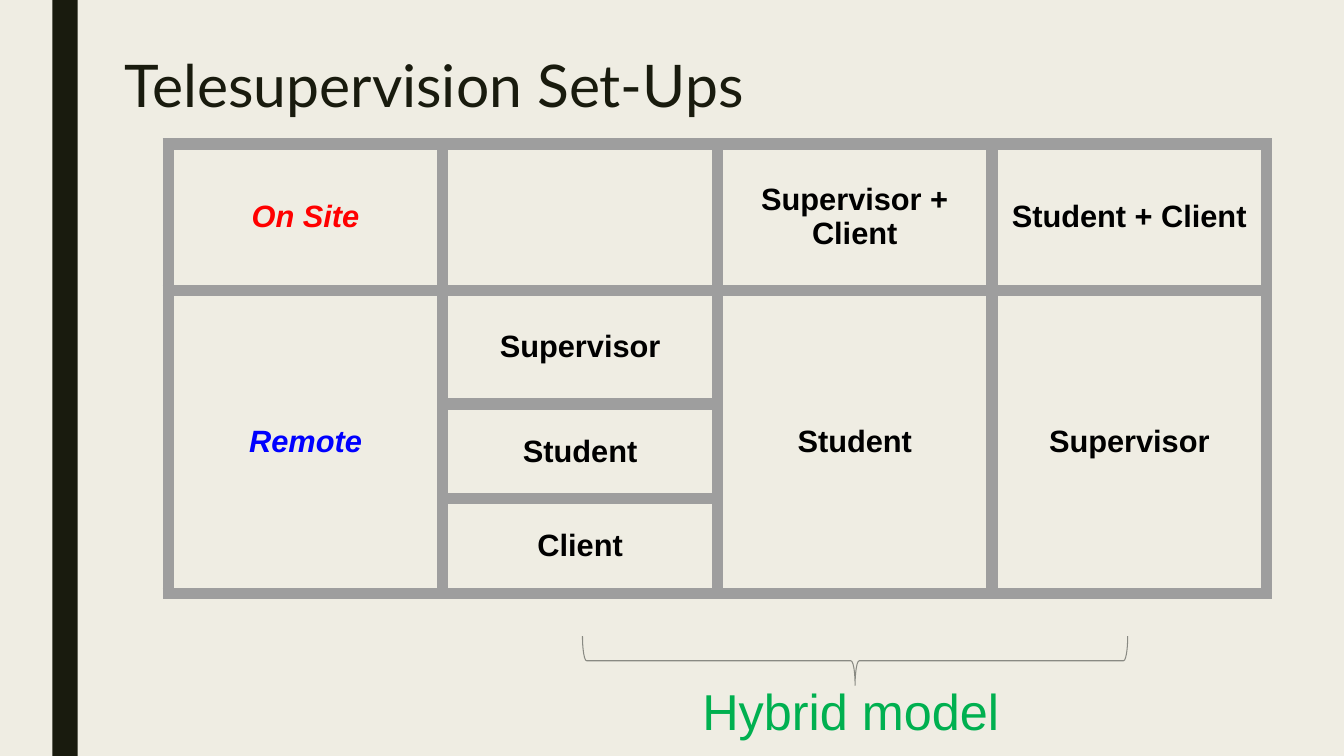
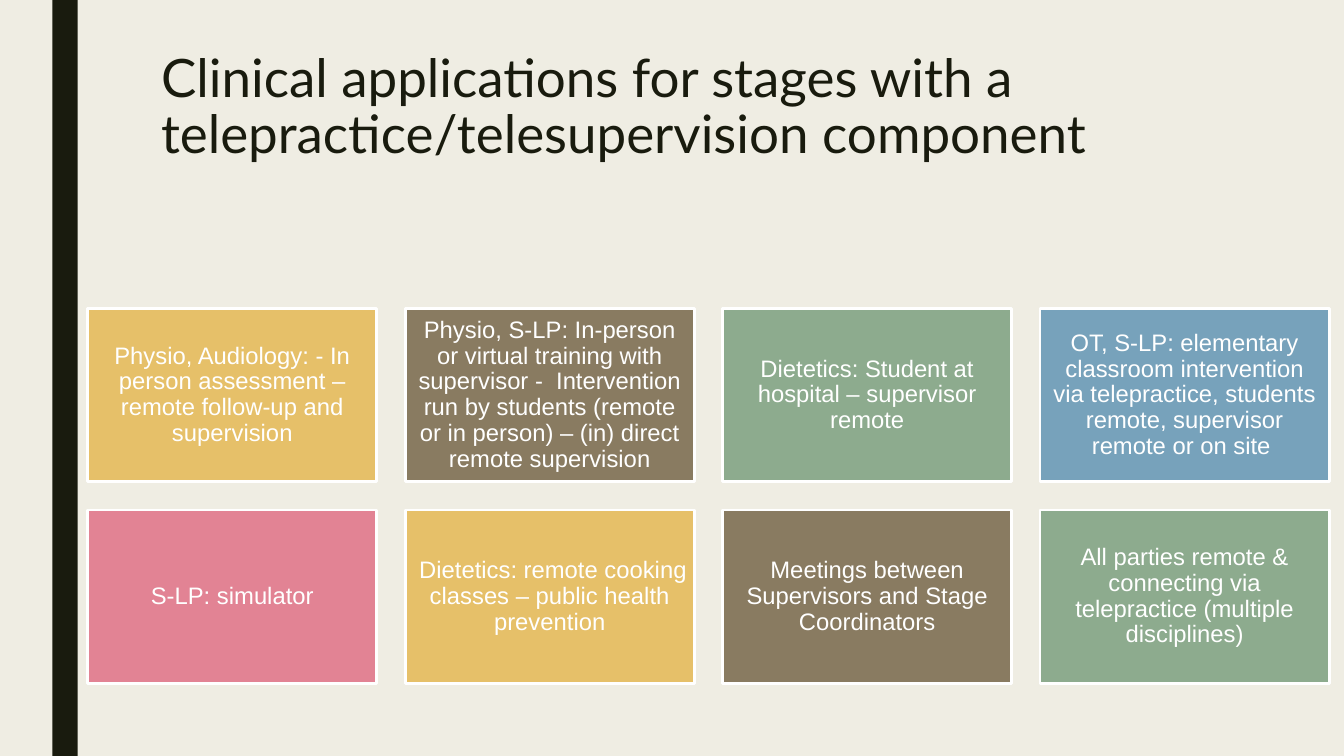
from dataclasses import dataclass

from lxml import etree
from pptx import Presentation
from pptx.dml.color import RGBColor
from pptx.enum.shapes import MSO_SHAPE
from pptx.enum.text import MSO_ANCHOR, PP_ALIGN
from pptx.oxml.ns import qn
from pptx.util import Cm, Pt

RECTANGLE = MSO_SHAPE.RECTANGLE
LEFT_BRACE = MSO_SHAPE.LEFT_BRACE
MIDDLE = MSO_ANCHOR.MIDDLE
LEFT, CENTER = PP_ALIGN.LEFT, PP_ALIGN.CENTER


@dataclass(frozen=True)
class Theme:
    # Colours
    paper: str = "EFEDE3"
    ink: str = "191B0E"
    black: str = "000000"
    white: str = "FFFFFF"
    grid: str = "9E9E9E"
    brace: str = "898A83"
    on_site: str = "FF0000"
    remote: str = "0000FF"
    hybrid: str = "00B050"
    cards: tuple = ("E6C069", "897B61", "8DAB8E", "77A2BB", "E28394")
    # Fonts and sizes in points
    title_font: str = "Lato"
    body_font: str = "Arial"
    title_size: float = 42
    long_title_size: float = 37.8
    table_size: float = 22
    label_size: float = 36
    card_size: float = 17
    grid_width: float = 9


THEME = Theme()

# Row, column, text, rows spanned
SETUPS = [
    (0, 0, "On Site", 1),
    (0, 2, "Supervisor + Client", 1),
    (0, 3, "Student + Client", 1),
    (1, 0, "Remote", 3),
    (1, 1, "Supervisor", 1),
    (2, 1, "Student", 1),
    (3, 1, "Client", 1),
    (1, 2, "Student", 3),
    (1, 3, "Supervisor", 3),
]
SETTING_COLOURS = {"On Site": THEME.on_site, "Remote": THEME.remote}

APPLICATIONS = [
    "Physio, Audiology: - In person assessment – remote follow-up and supervision",
    "Physio, S-LP: In-person or virtual training with supervisor -  Intervention "
    "run by students (remote or in person) – (in) direct remote supervision",
    "Dietetics: Student at hospital – supervisor remote",
    "OT, S-LP: elementary classroom intervention via telepractice, "
    "students remote, supervisor remote or on site ",
    "S-LP: simulator",
    " Dietetics: remote cooking classes – public health prevention",
    "Meetings between Supervisors and Stage Coordinators",
    "All parties remote & connecting via telepractice (multiple disciplines)",
]


def rgb(colour):
    return RGBColor.from_string(colour)


def write(frame, text, size, colour, font=THEME.body_font, align=LEFT,
          spacing=None, bold=False, italic=False):
    frame.word_wrap = True
    paragraph = frame.paragraphs[0]
    paragraph.alignment = align
    if spacing:
        paragraph.line_spacing = spacing
    run = paragraph.add_run()
    run.text = text
    run.font.name = font
    run.font.size = Pt(size)
    run.font.bold = bold
    run.font.italic = italic
    run.font.color.rgb = rgb(colour)


def add_text(slide, box, text, size, colour, **style):
    frame = slide.shapes.add_textbox(*map(Cm, box)).text_frame
    write(frame, text, size, colour, **style)


def add_block(slide, preset, box, fill=None, line=None, line_width=1):
    block = slide.shapes.add_shape(preset, *map(Cm, box))
    block.shadow.inherit = False
    if fill:
        block.fill.solid()
        block.fill.fore_color.rgb = rgb(fill)
    else:
        block.fill.background()
    if line:
        block.line.color.rgb = rgb(line)
        block.line.width = Pt(line_width)
    else:
        block.line.fill.background()
    return block


def start_slide(deck, title, box, size):
    """Background, side band and title shared by the slides."""
    slide = deck.slides.add_slide(deck.slide_layouts[6])
    slide.background.fill.solid()
    slide.background.fill.fore_color.rgb = rgb(THEME.paper)
    add_block(slide, RECTANGLE, (1.32, 0, 0.64, 19.05), fill=THEME.ink)
    add_text(slide, box, title, size, THEME.ink,
             font=THEME.title_font, spacing=0.89)
    return slide


def style_cell(cell):
    cell.vertical_anchor = MIDDLE
    cell.margin_left = cell.margin_right = Cm(0.25)
    cell.margin_top = cell.margin_bottom = Cm(0.25)
    # Borders come before the fill in the cell properties
    properties = cell._tc.get_or_add_tcPr()
    for side in ("a:lnL", "a:lnR", "a:lnT", "a:lnB"):
        border = etree.SubElement(properties, qn(side),
                                  w=str(Pt(THEME.grid_width)))
        solid = etree.SubElement(border, qn("a:solidFill"))
        etree.SubElement(solid, qn("a:srgbClr"), val=THEME.grid)
    cell.fill.background()


def add_setup_table(slide, left, top, column_width, row_heights, columns=4):
    table = slide.shapes.add_table(
        len(row_heights), columns, Cm(left), Cm(top),
        Cm(column_width * columns), Cm(sum(row_heights))).table
    table.first_row = table.horz_banding = False
    for column in table.columns:
        column.width = Cm(column_width)
    for row, height in zip(table.rows, row_heights):
        row.height = Cm(height)
    for cell in table.iter_cells():
        style_cell(cell)
    for row, column, text, span in SETUPS:
        cell = table.cell(row, column)
        if span > 1:
            cell.merge(table.cell(row + span - 1, column))
        write(cell.text_frame, text, THEME.table_size,
              SETTING_COLOURS.get(text, THEME.black), align=CENTER,
              bold=True, italic=text in SETTING_COLOURS)


def add_cards(slide, texts, left, top, width, height, gap, columns=4):
    for index, text in enumerate(texts):
        row, column = divmod(index, columns)
        box = (left + column * (width + gap), top + row * (height + gap),
               width, height)
        fill = THEME.cards[index % len(THEME.cards)]
        card = add_block(slide, RECTANGLE, box, fill, THEME.white, 2)
        frame = card.text_frame
        frame.margin_left = frame.margin_right = Cm(0.18)
        frame.margin_top = frame.margin_bottom = Cm(0.18)
        frame.vertical_anchor = MIDDLE
        write(frame, text, THEME.card_size, THEME.white,
              align=CENTER, spacing=0.9)


def build_setups(deck):
    slide = start_slide(deck, "Telesupervision Set-Ups",
                        (2.9, 1.32, 28.7, 3.18), THEME.title_size)
    add_setup_table(slide, 4.24, 3.63, 6.92, (3.68, 2.87, 2.39, 2.39))
    # Brace under the hybrid columns
    brace = add_block(slide, LEFT_BRACE, (20.93, 9.78, 1.24, 13.74),
                      line=THEME.brace, line_width=0.75)
    brace.rotation = 270
    add_text(slide, (17.45, 17.02, 9.93, 1.8), "Hybrid model",
             THEME.label_size, THEME.hybrid)


def build_applications(deck):
    slide = start_slide(
        deck, "Clinical applications for stages with "
        "a telepractice/telesupervision component",
        (3.81, 1.19, 28.83, 4.11), THEME.long_title_size)
    add_cards(slide, APPLICATIONS, 2.21, 7.77, 7.29, 4.37, 0.71)


def main():
    deck = Presentation()
    deck.slide_width, deck.slide_height = Cm(33.87), Cm(19.05)
    build_setups(deck)
    build_applications(deck)
    deck.save("out.pptx")


if __name__ == "__main__":
    main()
